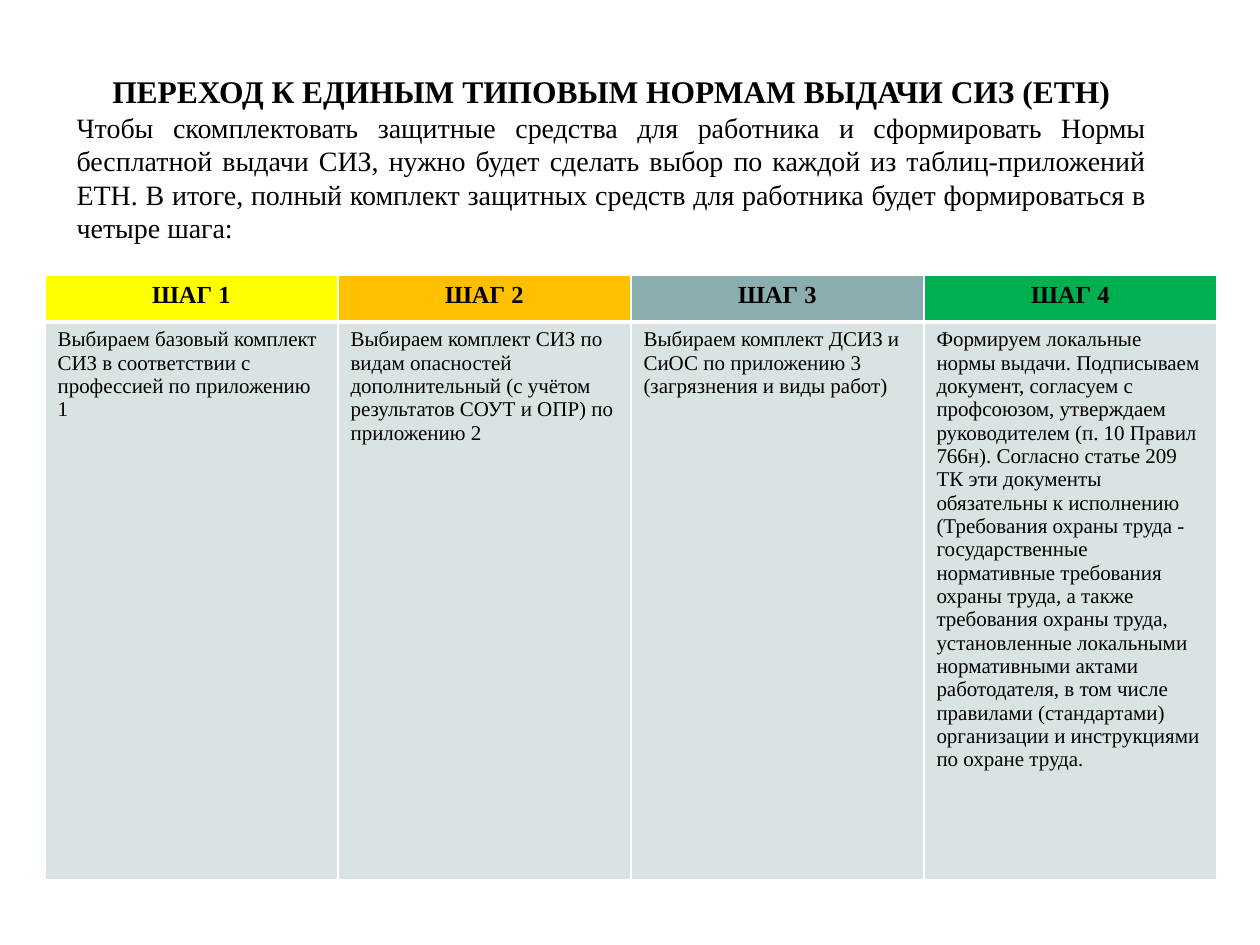
from lxml.etree import SubElement
from pptx import Presentation
from pptx.dml.color import RGBColor
from pptx.enum.text import MSO_ANCHOR, MSO_AUTO_SIZE, PP_ALIGN
from pptx.oxml.ns import qn
from pptx.util import Pt

PX = 914400 // 126
FONT = "Times New Roman"
COLORS = {"text": "000000", "border": "FFFFFF", "body": "DAE3E3"}
HEADING = "ПЕРЕХОД К ЕДИНЫМ ТИПОВЫМ НОРМАМ ВЫДАЧИ СИЗ (ЕТН)"
INTRO = (
    "Чтобы скомплектовать защитные средства для работника и сформировать Нормы "
    "бесплатной выдачи СИЗ, нужно будет сделать выбор по каждой из "
    "таблиц-приложений ЕТН. В итоге, полный комплект защитных средств для "
    "работника будет формироваться в четыре шага:"
)
STEPS = [
    ("ШАГ 1", "FFFF00",
     "Выбираем базовый комплект СИЗ в соответствии с профессией по приложению 1"),
    ("ШАГ 2", "FFC000",
     "Выбираем комплект СИЗ по видам опасностей дополнительный "
     "(с учётом результатов СОУТ и ОПР) по приложению 2"),
    ("ШАГ 3", "8CADAE",
     "Выбираем комплект ДСИЗ и СиОС по приложению 3 (загрязнения и виды работ)"),
    ("ШАГ 4", "00B050",
     "Формируем локальные нормы выдачи. Подписываем документ, согласуем с "
     "профсоюзом, утверждаем руководителем (п. 10 Правил 766н). Согласно статье "
     "209 ТК эти документы обязательны к исполнению (Требования охраны труда - "
     "государственные нормативные требования охраны труда, а также требования "
     "охраны труда, установленные локальными нормативными актами работодателя, "
     "в том числе правилами (стандартами) организации и инструкциями по охране "
     "труда."),
]
TITLE_BOX = (64, 66, 1095, 186)
TABLE_LEFT, TABLE_TOP = 45, 275
COLUMN_WIDTH = 293
ROW_HEIGHTS = (47, 558)


def px(value):
    return value * PX


def style(para, size, bold, align):
    para.alignment = align
    for span in para.runs:
        span.font.name = FONT
        span.font.size = Pt(size)
        span.font.bold = bold
        span.font.color.rgb = RGBColor.from_string(COLORS["text"])


def set_borders(cell, top, bottom):
    properties = cell._tc.get_or_add_tcPr()
    widths = {"a:lnL": 1, "a:lnR": 1, "a:lnT": top, "a:lnB": bottom}
    for position, (tag, width) in enumerate(widths.items()):
        line = SubElement(properties, qn(tag), w=str(Pt(width)))
        fill = SubElement(line, qn("a:solidFill"))
        SubElement(fill, qn("a:srgbClr"), val=COLORS["border"])
        properties.insert(position, line)


def fill_cell(cell, text, color, size, bold, align, top, bottom):
    cell.text_frame.text = text
    style(cell.text_frame.paragraphs[0], size, bold, align)
    cell.fill.solid()
    cell.fill.fore_color.rgb = RGBColor.from_string(color)
    set_borders(cell, top, bottom)


def add_title(page):
    title = page.shapes.title
    title.left, title.top, title.width, title.height = map(px, TITLE_BOX)
    frame = title.text_frame
    frame.word_wrap = True
    frame.auto_size = MSO_AUTO_SIZE.SHAPE_TO_FIT_TEXT
    frame.vertical_anchor = MSO_ANCHOR.TOP
    frame.text = f"{HEADING}\n{INTRO}"
    style(frame.paragraphs[0], 18, True, PP_ALIGN.CENTER)
    style(frame.paragraphs[1], 16, False, PP_ALIGN.JUSTIFY)


def add_steps(page):
    table = page.shapes.add_table(
        len(ROW_HEIGHTS), len(STEPS), px(TABLE_LEFT), px(TABLE_TOP),
        px(COLUMN_WIDTH * len(STEPS)), px(sum(ROW_HEIGHTS))).table
    for row, height in zip(table.rows, ROW_HEIGHTS):
        row.height = px(height)
    for index, (name, color, text) in enumerate(STEPS):
        table.columns[index].width = px(COLUMN_WIDTH)
        fill_cell(table.cell(0, index), name, color, 14, True,
                  PP_ALIGN.CENTER, 1, 3)
        fill_cell(table.cell(1, index), text, COLORS["body"], 12, False,
                  PP_ALIGN.LEFT, 3, 1)


def main():
    deck = Presentation()
    deck.slide_width, deck.slide_height = px(1260), px(945)
    page = deck.slides.add_slide(deck.slide_layouts[5])
    add_title(page)
    add_steps(page)
    deck.save("out.pptx")


if __name__ == "__main__":
    main()
